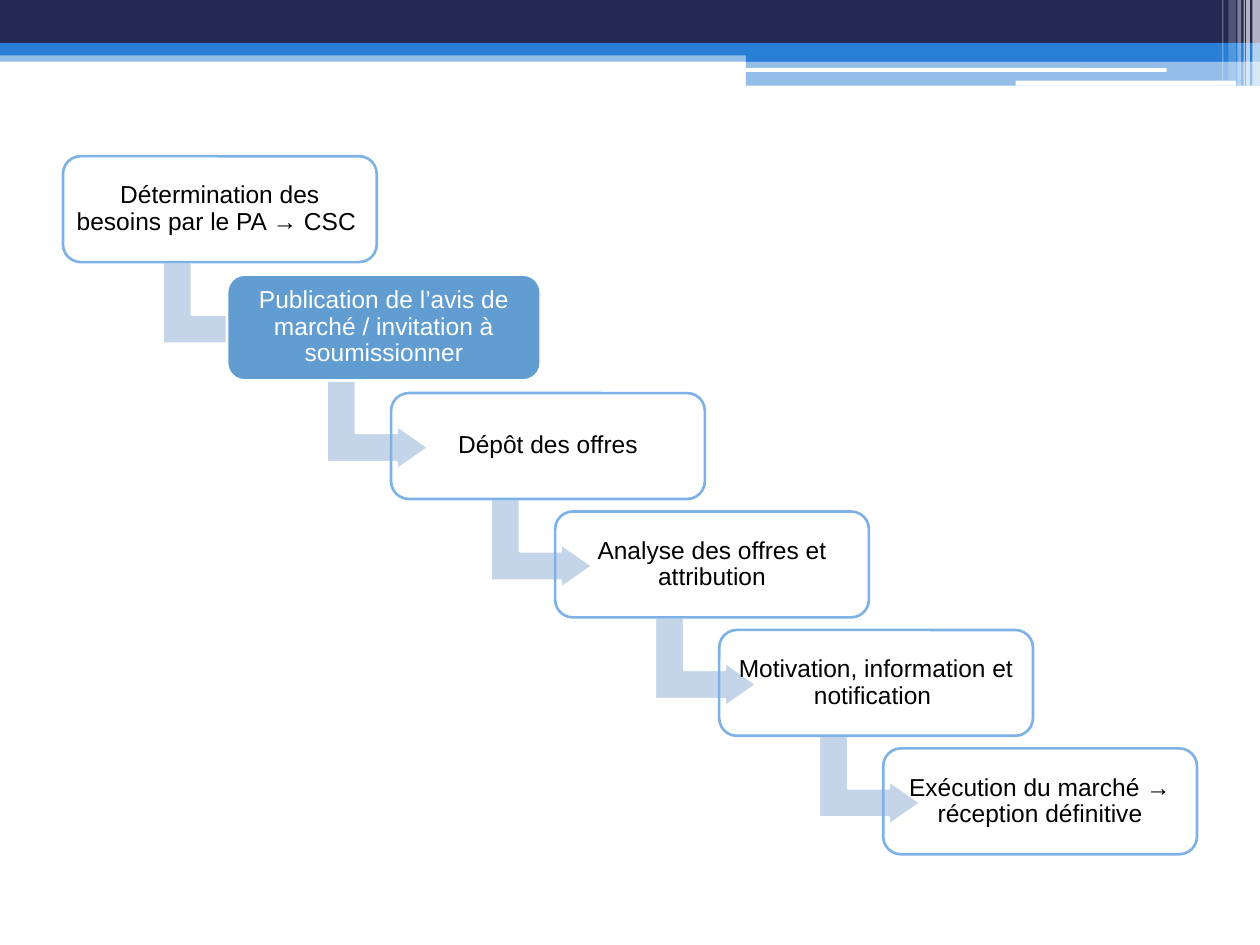
from dataclasses import dataclass
from typing import Optional

from lxml.etree import SubElement
from pptx import Presentation
from pptx.dml.color import RGBColor
from pptx.enum.shapes import MSO_SHAPE as Shape
from pptx.enum.text import MSO_ANCHOR as Anchor, PP_ALIGN as Align
from pptx.oxml.ns import qn
from pptx.util import Inches, Pt

NAVY, BLUE, WHITE, BLACK = "242852", "297FD5", "FFFFFF", "000000"
OUTLINE, HIGHLIGHT, ARROW = "7EB2E6", "629DD1", "C5D5E9"
BOX_W, BOX_H = 2.49, 0.84
STEP_X, STEP_Y = 1.302, 0.94
FIRST_X, FIRST_Y = 0.5, 1.24


@dataclass
class Bar:
    x: float
    y: float
    w: float
    h: float
    color: str = WHITE
    alpha: int = 100
    kind: Shape = Shape.RECTANGLE


@dataclass
class Step:
    text: str
    active: bool = False


BARS = [
    Bar(0, 0.4, 10, 0.09, BLUE, 50),
    Bar(0, 0, 10, 0.34, NAVY),
    Bar(0, 0.34, 10, 0.1, BLUE),
    Bar(5.92, 0.39, 4.08, 0.1, BLUE),
    Bar(5.92, 0.48, 4.08, 0.2, BLUE, 50),
    Bar(5.91, 0.54, 3.35, 0.03, kind=Shape.ROUNDED_RECTANGLE),
    Bar(8.06, 0.64, 1.75, 0.04, kind=Shape.ROUNDED_RECTANGLE),
    Bar(9.94, 0, 0.06, 0.68, alpha=65),
    Bar(9.89, 0, 0.03, 0.68, alpha=65),
    Bar(9.87, 0, 0.01, 0.68, alpha=60),
    Bar(9.82, 0, 0.03, 0.68, alpha=40),
    Bar(9.75, 0, 0.06, 0.64, alpha=20),
    Bar(9.7, 0, 0.01, 0.64, alpha=30),
]

STEPS = [
    Step("Détermination des besoins par le PA → CSC "),
    Step("Publication de l’avis de marché / invitation à soumissionner", True),
    Step("Dépôt des offres"),
    Step("Analyse des offres et attribution"),
    Step("Motivation, information et notification "),
    Step("Exécution du marché → réception définitive"),
]


def rgb(color: str) -> RGBColor:
    return RGBColor.from_string(color)


def add_shape(s, kind: Shape, x: float, y: float, w: float, h: float,
              fill: Optional[str], line: Optional[str] = None):
    sp = s.shapes.add_shape(kind, Inches(x), Inches(y), Inches(w), Inches(h))
    sp.shadow.inherit = False
    if fill:
        sp.fill.solid()
        sp.fill.fore_color.rgb = rgb(fill)
    else:
        sp.fill.background()
    if line:
        sp.line.color.rgb = rgb(line)
        sp.line.width = Pt(1.5)
    else:
        sp.line.fill.background()
    return sp


def add_bar(s, bar: Bar) -> None:
    sp = add_shape(s, bar.kind, bar.x, bar.y, bar.w, bar.h, bar.color)
    if bar.alpha < 100:
        clr = sp._element.spPr.find(f"{qn('a:solidFill')}/{qn('a:srgbClr')}")
        SubElement(clr, qn("a:alpha"), val=str(bar.alpha * 1000))


def add_arrow(s, x: float, y: float) -> None:
    sp = add_shape(s, Shape.BENT_UP_ARROW, x + 0.84, y + 0.79, 0.71, 0.81, ARROW, WHITE)
    sp.rotation = 90
    for i, value in enumerate((0.328, 0.25, 0.358)):
        sp.adjustments[i] = value


def add_step(s, step: Step, x: float, y: float) -> None:
    fill, line, color = (HIGHLIGHT, WHITE, WHITE) if step.active else (None, OUTLINE, BLACK)
    sp = add_shape(s, Shape.ROUNDED_RECTANGLE, x, y, BOX_W, BOX_H, fill, line)
    tf = sp.text_frame
    tf.word_wrap = True
    tf.vertical_anchor = Anchor.MIDDLE
    tf.margin_left = tf.margin_right = tf.margin_top = tf.margin_bottom = Inches(0.06)
    tf.text = step.text
    p = tf.paragraphs[0]
    p.alignment = Align.CENTER
    p.line_spacing = 0.9
    font = p.runs[0].font
    font.name = "Arial"
    font.size = Pt(14)
    font.color.rgb = rgb(color)


def main() -> None:
    prs = Presentation()
    prs.slide_width, prs.slide_height = Inches(10), Inches(7.5)
    s = prs.slides.add_slide(prs.slide_layouts[6])
    for bar in BARS:
        add_bar(s, bar)
    for i, step in enumerate(STEPS):
        x, y = FIRST_X + i * STEP_X, FIRST_Y + i * STEP_Y
        if i < len(STEPS) - 1:
            add_arrow(s, x, y)
        add_step(s, step, x, y)
    prs.save("out.pptx")


if __name__ == "__main__":
    main()
